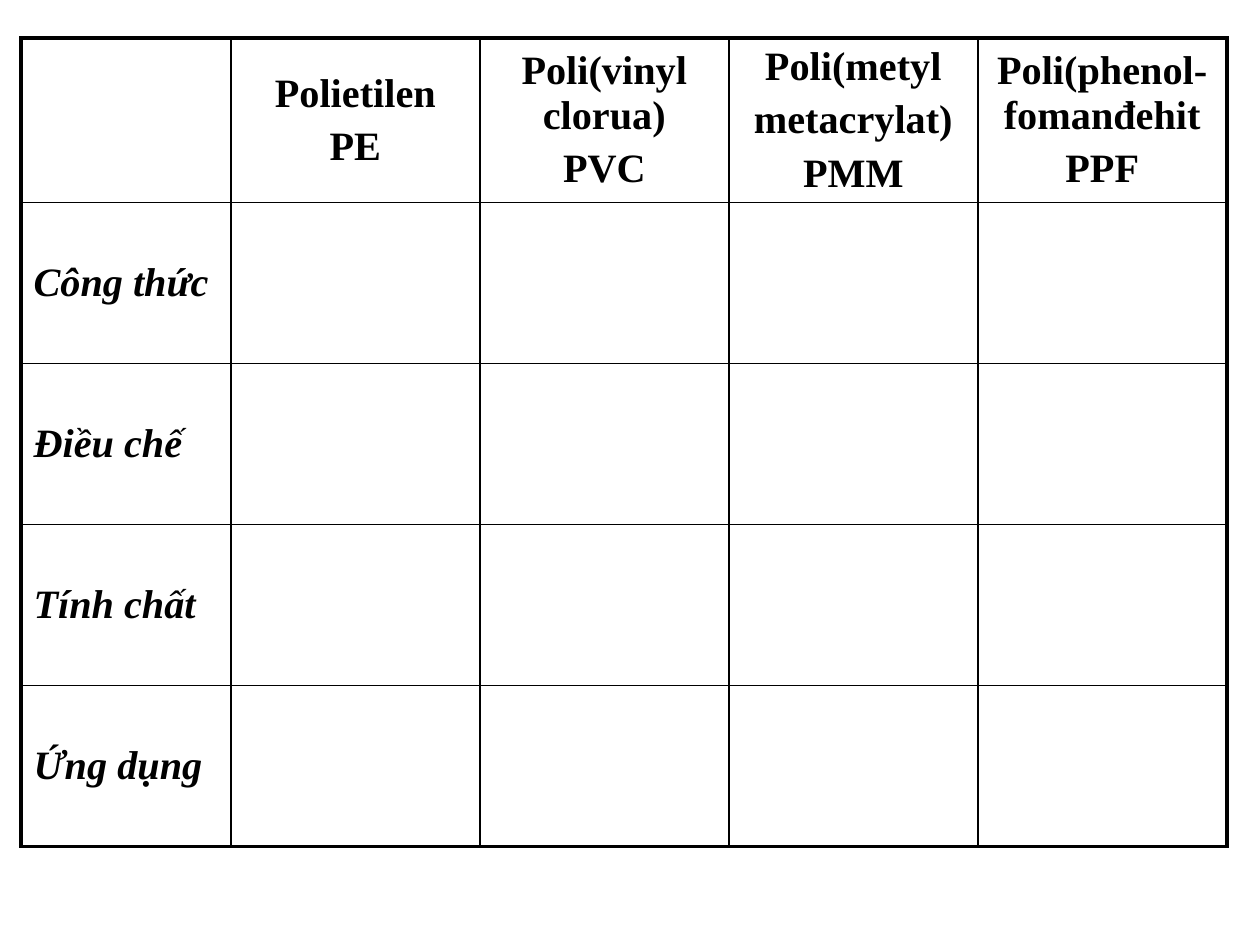
from lxml import etree
from pptx import Presentation
from pptx.dml.color import RGBColor
from pptx.enum.text import MSO_ANCHOR, PP_ALIGN
from pptx.oxml.ns import qn
from pptx.util import Emu, Pt

EMU_PER_PX = 914400 / 126
BLACK = RGBColor(0, 0, 0)
FONT = "Times New Roman"
MIDDLE = MSO_ANCHOR.MIDDLE
LEFT, CENTER = PP_ALIGN.LEFT, PP_ALIGN.CENTER
BLANK_LAYOUT = 6

LABEL_WIDTH, POLYMER_WIDTH, ROW_HEIGHT = 210, 249, 161
INNER_LINE, OUTER_LINE = Pt(1), Pt(2.25)

POLYMERS = [
    "Polietilen\nPE",
    "Poli(vinyl clorua)\nPVC",
    "Poli(metyl\nmetacrylat)\nPMM",
    "Poli(phenol-fomanđehit\nPPF",
]
TOPICS = ["Công thức", "Điều chế", "Tính chất", "Ứng dụng"]


def px(length):
    return Emu(round(length * EMU_PER_PX))


def write_cell(cell, text, align, italic=False):
    cell.vertical_anchor = MIDDLE
    cell.text_frame.text = text
    for paragraph in cell.text_frame.paragraphs:
        paragraph.alignment = align
        paragraph.space_before = Pt(5)
        for span in paragraph.runs:
            span.font.name = FONT
            span.font.size = Pt(23)
            span.font.bold = True
            span.font.italic = italic
            span.font.color.rgb = BLACK


def draw_borders(cell, outer_sides):
    properties = cell._tc.get_or_add_tcPr()
    for side in "LRTB":
        width = OUTER_LINE if side in outer_sides else INNER_LINE
        line = etree.SubElement(properties, qn(f"a:ln{side}"), w=str(width))
        fill = etree.SubElement(line, qn("a:solidFill"))
        etree.SubElement(fill, qn("a:srgbClr"), val=str(BLACK))


def add_polymer_table(page):
    row_count, column_count = len(TOPICS) + 1, len(POLYMERS) + 1
    width = LABEL_WIDTH + POLYMER_WIDTH * len(POLYMERS)
    table = page.shapes.add_table(
        row_count, column_count, px(21), px(38), px(width), px(ROW_HEIGHT * row_count)
    ).table
    table.first_row = False
    table.horz_banding = False
    for index, column in enumerate(table.columns):
        column.width = px(POLYMER_WIDTH if index else LABEL_WIDTH)
    for row in table.rows:
        row.height = px(ROW_HEIGHT)

    # Thick frame around the table, thin lines inside
    for row in range(row_count):
        for column in range(column_count):
            edges = {
                "L": column == 0,
                "R": column == column_count - 1,
                "T": row == 0,
                "B": row == row_count - 1,
            }
            cell = table.cell(row, column)
            draw_borders(cell, [side for side, outer in edges.items() if outer])
            cell.fill.background()

    # Polymer headings and topic labels
    for column, polymer in enumerate(POLYMERS, start=1):
        write_cell(table.cell(0, column), polymer, CENTER)
    for row, topic in enumerate(TOPICS, start=1):
        write_cell(table.cell(row, 0), topic, LEFT, italic=True)


def main():
    deck = Presentation()
    deck.slide_width, deck.slide_height = px(1260), px(945)
    page = deck.slides.add_slide(deck.slide_layouts[BLANK_LAYOUT])
    add_polymer_table(page)
    deck.save("out.pptx")


if __name__ == "__main__":
    main()
